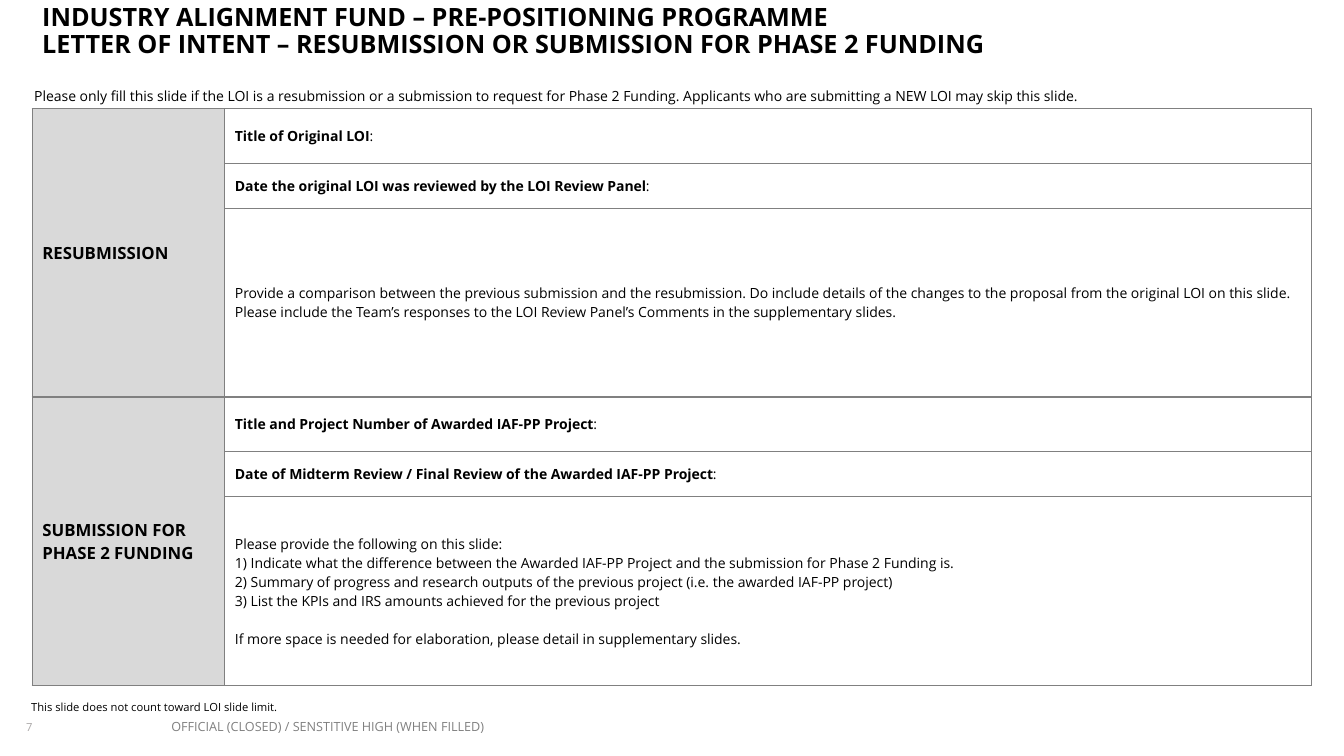
from lxml import etree
from pptx import Presentation
from pptx import util as u
from pptx.dml import color
from pptx.enum import text
from pptx.oxml import ns

FONT = "Open Sans"
HUES = {"ink": "000000", "label": "D9D9D9", "line": "808080", "foot": "808080", "page": "ABA8A8"}
COLS = [1.91, 10.78]
ROWS = [0.54, 0.45, 1.87]
PARTS = [
    ("RESUBMISSION",
     ["Title of Original LOI", "Date the original LOI was reviewed by the LOI Review Panel"],
     ["Provide a comparison between the previous submission and the resubmission. Do include "
      "details of the changes to the proposal from the original LOI on this slide.",
      "Please include the Team’s responses to the LOI Review Panel’s Comments in the "
      "supplementary slides."]),
    ("SUBMISSION FOR PHASE 2 FUNDING",
     ["Title and Project Number of Awarded IAF-PP Project",
      "Date of Midterm Review / Final Review of the Awarded IAF-PP Project"],
     ["Please provide the following on this slide:",
      "1) Indicate what the difference between the Awarded IAF-PP Project and the submission "
      "for Phase 2 Funding is.",
      "2) Summary of progress and research outputs of the previous project (i.e. the awarded "
      "IAF-PP project)",
      "3) List the KPIs and IRS amounts achieved for the previous project",
      "If more space is needed for elaboration, please detail in supplementary slides."]),
]


def hue(name):
    """Return the named colour."""
    return color.RGBColor.from_string(HUES[name])


def style(font, size, bold=None, tint="ink"):
    """Set the face, size, weight and colour of a font."""
    font.name, font.size, font.bold = FONT, u.Pt(size), bold
    font.color.rgb = hue(tint)


def write(frame, lines, size, bold=None, tint="ink"):
    """Fill a text frame with one paragraph per line."""
    for i, line in enumerate(lines):
        para = frame.paragraphs[0] if i == 0 else frame.add_paragraph()
        para.text = line
        style(para.font, size, bold, tint)
    return frame.paragraphs


def label(slide, box, words, size, bold=None, tint="ink", inset=True):
    """Place a wrapped text box and return its paragraph."""
    frame = slide.shapes.add_textbox(*map(u.Inches, box)).text_frame
    frame.word_wrap = True
    if not inset:
        frame.margin_left = frame.margin_right = frame.margin_top = frame.margin_bottom = 0
    return write(frame, [words], size, bold, tint)[0]


def edge(cell, fill=None):
    """Give a cell thin borders and a fill."""
    props = cell._tc.get_or_add_tcPr()
    for side in ("lnL", "lnR", "lnT", "lnB"):
        line = etree.SubElement(props, ns.qn("a:" + side), w=str(u.Pt(1)))
        paint = etree.SubElement(line, ns.qn("a:solidFill"))
        etree.SubElement(paint, ns.qn("a:srgbClr"), val=HUES["line"])
    if fill:
        cell.fill.solid()
        cell.fill.fore_color.rgb = hue(fill)
    else:
        cell.fill.background()
    cell.vertical_anchor = text.MSO_ANCHOR.MIDDLE


def part(grid, top, name, heads, notes):
    """Fill one part of the form from the given row down."""
    for i, high in enumerate(ROWS):
        grid.rows[top + i].height = u.Inches(high)
        edge(grid.cell(top + i, 0), "label")
        edge(grid.cell(top + i, 1))
    side = grid.cell(top, 0)
    side.merge(grid.cell(top + len(ROWS) - 1, 0))
    write(side.text_frame, [name], 12, True)
    for i, head in enumerate(heads):
        para = grid.cell(top + i, 1).text_frame.paragraphs[0]
        for words, bold in ((head, True), (":", False)):
            run = para.add_run()
            run.text = words
            style(run.font, 10, bold)
    return write(grid.cell(top + len(heads), 1).text_frame, notes, 10, False)


def form(slide, left, top):
    """Draw the form table with its two parts."""
    count = len(ROWS) * len(PARTS)
    box = map(u.Inches, (left, top, sum(COLS), sum(ROWS) * len(PARTS)))
    grid = slide.shapes.add_table(count, len(COLS), *box).table
    grid.first_row = grid.horz_banding = False
    for col, wide in zip(grid.columns, COLS):
        col.width = u.Inches(wide)
    for i, (name, heads, notes) in enumerate(PARTS):
        paras = part(grid, i * len(ROWS), name, heads, notes)
    paras[-1].space_before = u.Pt(13.6)


def header(slide, left, top):
    """Draw the title and the guidance line."""
    title = label(slide, (left + 0.08, top, 11.18, 0.52),
                  "INDUSTRY ALIGNMENT FUND – PRE-POSITIONING PROGRAMME\v"
                  "LETTER OF INTENT – RESUBMISSION OR SUBMISSION FOR PHASE 2 FUNDING", 18, True)
    title.line_spacing = 0.9
    guide = label(slide, (left, top + 0.82, 11.55, 0.31),
                  "Please only fill this slide if the LOI is a resubmission or a submission to "
                  "request for Phase 2 Funding. Applicants who are submitting a NEW LOI may skip "
                  "this slide.", 10)
    guide.alignment = text.PP_ALIGN.JUSTIFY


def footer(slide, left, top):
    """Draw the limit note, page number and classification."""
    label(slide, (left, top, 9.61, 0.24), "This slide does not count toward LOI slide limit.", 8)
    page = label(slide, (left + 0.05, top + 0.23, 0.79, 0.19), "7", 8, tint="page", inset=False)
    page.line_spacing = 1.1
    label(slide, (left + 1.49, top + 0.23, 5.33, 0.19),
          "OFFICIAL (CLOSED) / SENSTITIVE HIGH (WHEN FILLED)", 9, tint="foot", inset=False)


def main():
    """Build and save the slide."""
    deck = Presentation()
    deck.slide_width, deck.slide_height = u.Inches(13.33), u.Inches(7.5)
    slide = deck.slides.add_slide(deck.slide_layouts[6])
    header(slide, 0.24, 0)
    form(slide, 0.32, 1.08)
    footer(slide, 0.21, 6.9)
    deck.save("out.pptx")


if __name__ == "__main__":
    main()
